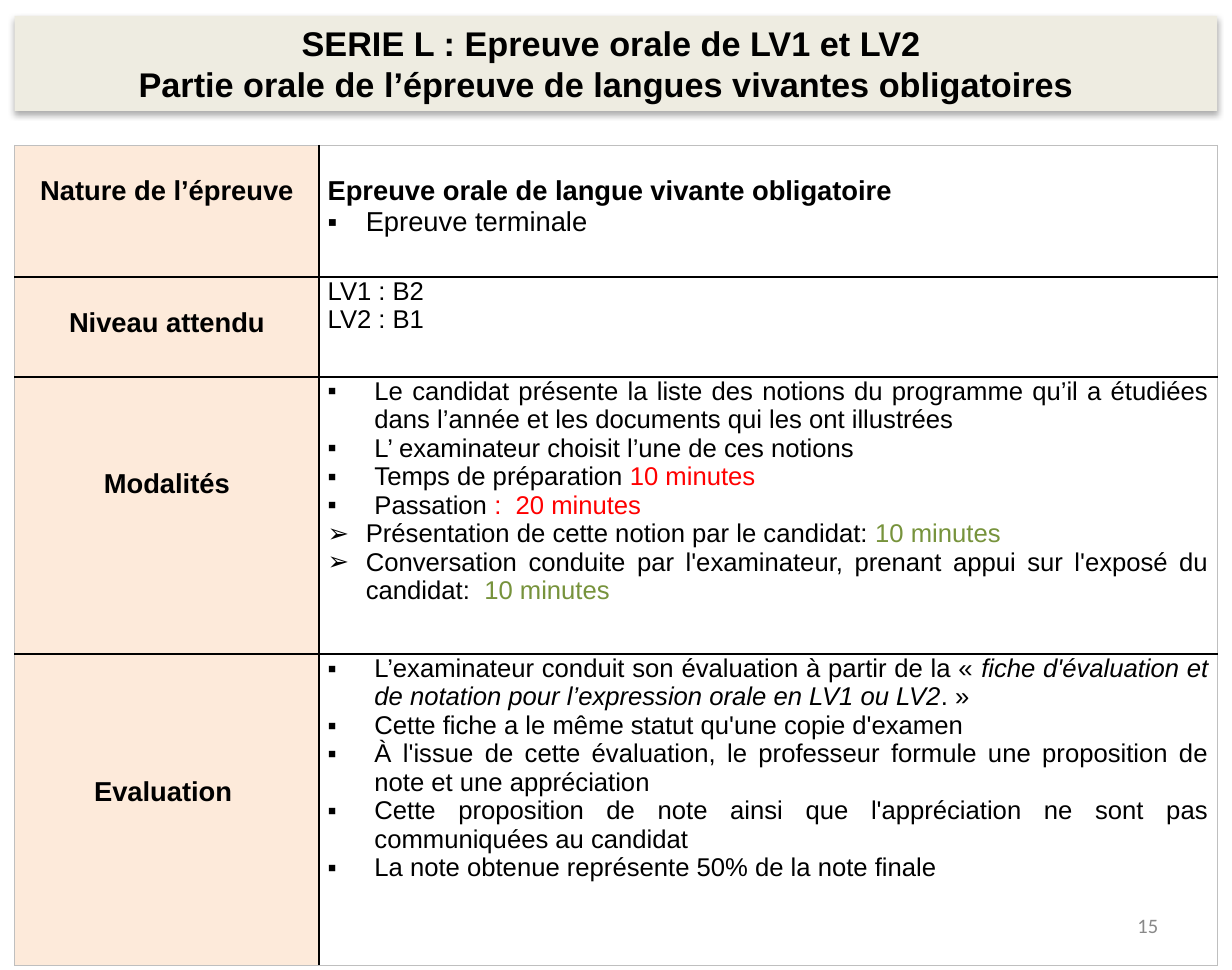
import lxml.etree
import pptx
import pptx.dml.color
import pptx.enum.shapes
import pptx.enum.text
import pptx.oxml.ns
import pptx.util

Inches = pptx.util.Inches
Pt = pptx.util.Pt
ALIGN = pptx.enum.text.PP_ALIGN

THEME = {
    "font": "Arial", "number_font": "Calibri",
    "title_size": 20, "label_size": 16, "body_size": 15, "number_size": 12,
    "text": "000000", "banner": "EEECE1", "label_fill": "FDEADA", "cell_fill": "FFFFFF",
    "red": "FF0000", "green": "77933C", "number": "898989",
    "grid": "000000", "frame": "BFBFBF", "grid_width": 1, "frame_width": 0.5,
}

TITLE = [
    "SERIE L : Epreuve orale de LV1 et LV2 ",
    "Partie orale de l’épreuve de langues vivantes obligatoires  ",
]
SLIDE_NUMBER = "15"

# A paragraph is (kind, runs); a run is a string or (string, style).
ROWS = [
    {"label": "Nature de l’épreuve", "height": 1.07, "label_drop": 1, "body_drop": 1,
     "size": "label_size", "body": [
         ("heading", ["Epreuve orale de langue vivante obligatoire"]),
         ("short square", ["Epreuve terminale"]),
     ]},
    {"label": "Niveau attendu", "height": 0.81, "label_drop": 1, "body": [
        ("plain", ["LV1 : B2"]),
        ("plain", ["LV2 : B1"]),
    ]},
    {"label": "Modalités", "height": 2.25, "label_drop": 3, "body": [
        ("square", ["Le candidat présente la liste des notions du programme qu’il a étudiées "
                    "dans l’année et les documents qui les ont illustrées"]),
        ("square", ["L’ examinateur choisit l’une de ces notions"]),
        ("square", ["Temps de préparation ", ("10 minutes ", "red")]),
        ("square", ["Passation ", (":  20 minutes ", "red")]),
        ("arrow", ["Présentation de cette notion par le candidat: ", ("10 minutes", "green")]),
        ("arrow", ["Conversation conduite par l'examinateur, prenant appui sur l'exposé "
                   "du candidat:  ", ("10 minutes", "green")]),
    ]},
    {"label": "Evaluation ", "height": 2.53, "label_drop": 4, "body": [
        ("square", ["L’examinateur conduit son évaluation à partir de la « ",
                    ("fiche d'évaluation et de notation pour l’expression orale en LV1 ou LV2",
                     "italic"),
                    ". » "]),
        ("square", ["Cette fiche a le même statut qu'une copie d'examen"]),
        ("square", ["À l'issue de cette évaluation, le professeur formule une proposition "
                    "de note et une appréciation"]),
        ("square", ["Cette proposition de note ainsi que l'appréciation ne sont pas "
                    "communiquées au candidat"]),
        ("square", ["La note obtenue représente 50% de la note finale "]),
    ]},
]

# kind: (alignment, bullet, indent in inches, bold)
KINDS = {
    "label": (ALIGN.CENTER, None, 0, True),
    "heading": (ALIGN.LEFT, None, 0, True),
    "plain": (ALIGN.LEFT, None, 0, False),
    "short square": (ALIGN.LEFT, "▪", 0.31, False),
    "square": (ALIGN.JUSTIFY, "▪", 0.38, False),
    "arrow": (ALIGN.JUSTIFY, "➢", 0.31, False),
}

SLIDE_WIDTH, SLIDE_HEIGHT = 10, 63 / 8
LEFT, WIDTH = 0.12, 9.76
TABLE_TOP = 1.18
COLUMNS = (2.47, 7.29)
LINE_HEIGHT = 0.25
CELL_MARGIN = 0.07


def color(name):
    return pptx.dml.color.RGBColor.from_string(THEME[name])


def add_element(parent, tag, **attributes):
    return lxml.etree.SubElement(parent, pptx.oxml.ns.qn(tag), attributes)


def set_font(paragraph, size, bold=False, font="font", text_color="text"):
    paragraph.font.name = THEME[font]
    paragraph.font.size = Pt(THEME[size])
    paragraph.font.bold = bold
    paragraph.font.color.rgb = color(text_color)


def set_bullet(paragraph, character, indent):
    """Hang the paragraph on a bullet; call before its font is set."""
    properties = paragraph._p.get_or_add_pPr()
    properties.set("marL", str(Inches(indent)))
    properties.set("indent", str(-Inches(indent)))
    add_element(properties, "a:buFont", typeface=THEME["font"])
    add_element(properties, "a:buChar", char=character)


def set_borders(cell, outer_sides):
    """Draw the four borders, those on the table's rim in the frame style."""
    properties = cell._tc.get_or_add_tcPr()
    for side in "LRTB":
        style = "frame" if side in outer_sides else "grid"
        line = add_element(properties, f"a:ln{side}", w=str(Pt(THEME[style + "_width"])))
        add_element(add_element(line, "a:solidFill"), "a:srgbClr", val=THEME[style])


def fill_cell(cell, paragraphs, size, drop, fill):
    cell.margin_left = cell.margin_right = Inches(CELL_MARGIN)
    cell.margin_top = Inches(drop * LINE_HEIGHT)
    cell.margin_bottom = 0
    cell.fill.solid()
    cell.fill.fore_color.rgb = color(fill)
    for index, (kind, runs) in enumerate(paragraphs):
        frame = cell.text_frame
        paragraph = frame.add_paragraph() if index else frame.paragraphs[0]
        alignment, bullet, indent, bold = KINDS[kind]
        paragraph.alignment = alignment
        if bullet:
            set_bullet(paragraph, bullet, indent)
        set_font(paragraph, size, bold)
        for item in runs:
            text, style = (item, None) if isinstance(item, str) else item
            run = paragraph.add_run()
            run.text = text
            if style == "italic":
                run.font.italic = True
            elif style:
                run.font.color.rgb = color(style)


def add_banner(slide):
    banner = slide.shapes.add_shape(
        pptx.enum.shapes.MSO_SHAPE.RECTANGLE,
        Inches(LEFT), Inches(0.13), Inches(WIDTH), Inches(0.77))
    banner.fill.solid()
    banner.fill.fore_color.rgb = color("banner")
    banner.line.fill.background()
    banner.shadow.inherit = False
    effects = banner._element.spPr.find(pptx.oxml.ns.qn("a:effectLst"))
    shadow = add_element(effects, "a:outerShdw", blurRad=str(Pt(3.5)), dist=str(Pt(2.2)),
                         dir="5400000", rotWithShape="0")
    add_element(add_element(shadow, "a:srgbClr", val="000000"), "a:alpha", val="32000")
    frame = banner.text_frame
    frame.text = "\n".join(TITLE)
    for paragraph in frame.paragraphs:
        paragraph.alignment = ALIGN.CENTER
        set_font(paragraph, "title_size", bold=True)


def add_exam_table(slide):
    height = sum(row["height"] for row in ROWS)
    table = slide.shapes.add_table(
        len(ROWS), len(COLUMNS), Inches(LEFT), Inches(TABLE_TOP),
        Inches(WIDTH), Inches(height)).table
    table.first_row = table.horz_banding = False
    for column, width in zip(table.columns, COLUMNS):
        column.width = Inches(width)
    for index, row in enumerate(ROWS):
        table.rows[index].height = Inches(row["height"])
        rim = ("T" if index == 0 else "") + ("B" if index == len(ROWS) - 1 else "")
        label, body = table.cell(index, 0), table.cell(index, 1)
        set_borders(label, "L" + rim)
        set_borders(body, "R" + rim)
        fill_cell(label, [("label", [row["label"]])], "label_size",
                  row["label_drop"], "label_fill")
        fill_cell(body, row["body"], row.get("size", "body_size"),
                  row.get("body_drop", 0), "cell_fill")


def add_slide_number(slide):
    box = slide.shapes.add_textbox(Inches(7.17), Inches(7.3), Inches(2.33), Inches(0.42))
    frame = box.text_frame
    frame.word_wrap = True
    frame.vertical_anchor = pptx.enum.text.MSO_ANCHOR.MIDDLE
    frame.text = SLIDE_NUMBER
    frame.paragraphs[0].alignment = ALIGN.RIGHT
    set_font(frame.paragraphs[0], "number_size", font="number_font", text_color="number")


def main():
    presentation = pptx.Presentation()
    presentation.slide_width = Inches(SLIDE_WIDTH)
    presentation.slide_height = Inches(SLIDE_HEIGHT)
    slide = presentation.slides.add_slide(presentation.slide_layouts[6])
    add_banner(slide)
    add_exam_table(slide)
    add_slide_number(slide)
    presentation.save("out.pptx")


if __name__ == "__main__":
    main()
